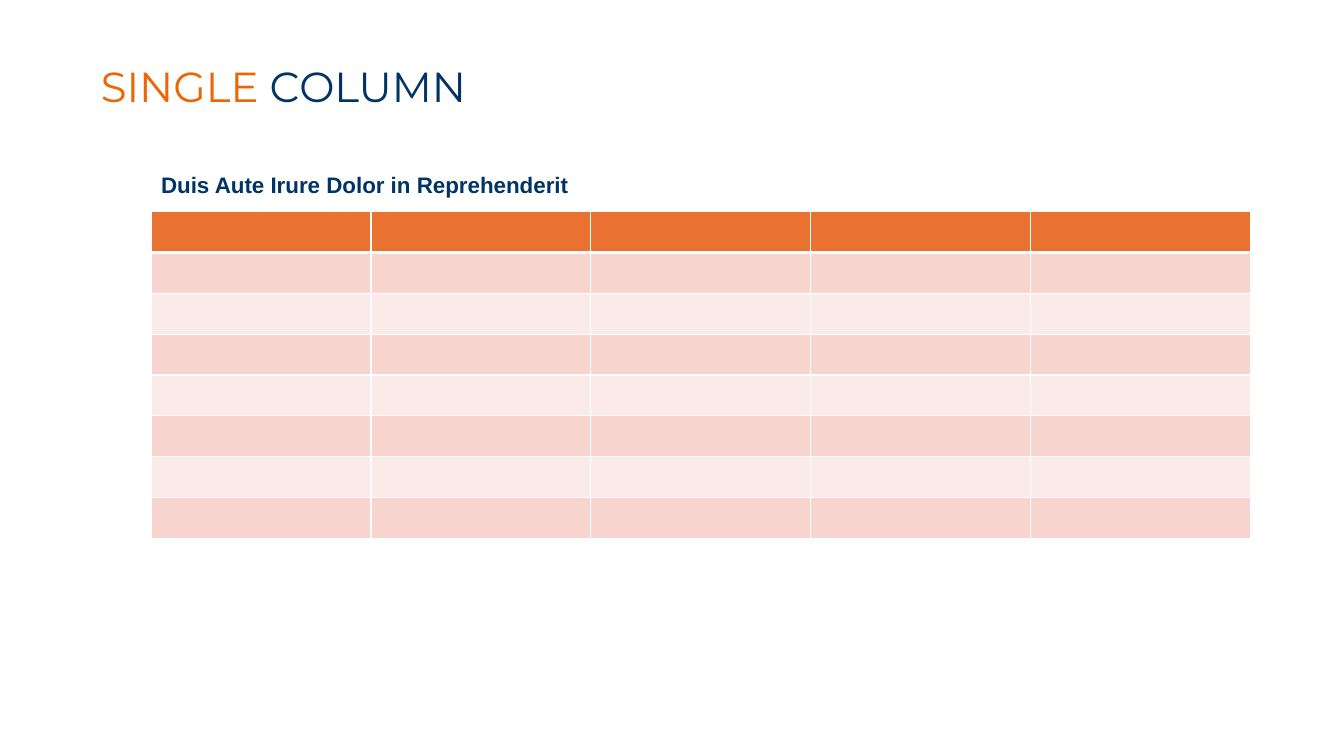
"""Build the single column slide: a two-colour title, a heading and an empty banded table."""
import pptx
import pptx.dml.color
import pptx.enum.text
import pptx.oxml
import pptx.oxml.ns
import pptx.util

Cm = pptx.util.Cm
Pt = pptx.util.Pt
MSO_ANCHOR = pptx.enum.text.MSO_ANCHOR

COLORS = {
    "orange": "EC6607",
    "navy": "003366",
    "header": "E97132",
    "band_dark": "F7D5CE",
    "band_light": "FBEBE8",
    "border": "FFFFFF",
}
ROWS, COLS = 8, 5
ROW_HEIGHT, COL_WIDTH = Cm(1.03), Cm(5.54)


def rgb(name):
    return pptx.dml.color.RGBColor.from_string(COLORS[name])


def add_border(cell, side, width):
    ln = pptx.oxml.parse_xml(
        f'<a:{side} {pptx.oxml.ns.nsdecls("a")} w="{Pt(width)}"><a:solidFill>'
        f'<a:srgbClr val="{COLORS["border"]}"/></a:solidFill></a:{side}>'
    )
    cell._tc.get_or_add_tcPr().append(ln)


prs = pptx.Presentation()
prs.slide_width, prs.slide_height = Cm(33.87), Cm(19.05)
s = prs.slides.add_slide(prs.slide_layouts[6])

texts = [
    {
        "box": (2.29, 1.52, 29.21, 1.42),
        "anchor": MSO_ANCHOR.MIDDLE,
        "spacing": 0.9,
        "runs": [("SINGLE ", "orange"), ("COLUMN", "navy")],
        "font": {"name": "Montserrat", "size": Pt(30)},
    },
    {
        "box": (3.81, 3.85, 27.69, 1.14),
        "anchor": MSO_ANCHOR.TOP,
        "spacing": 1.5,
        "runs": [("Duis Aute Irure Dolor in Reprehenderit", "navy")],
        "font": {"name": "Arial", "size": Pt(16), "bold": True},
    },
]
for text in texts:
    tf = s.shapes.add_textbox(*map(Cm, text["box"])).text_frame
    tf.word_wrap = True
    tf.vertical_anchor = text["anchor"]
    p = tf.paragraphs[0]
    p.line_spacing = text["spacing"]
    for words, color in text["runs"]:
        r = p.add_run()
        r.text = words
        r.font.color.rgb = rgb(color)
        for attr, value in text["font"].items():
            setattr(r.font, attr, value)

table = s.shapes.add_table(
    ROWS, COLS, Cm(3.81), Cm(5.33), COLS * COL_WIDTH, ROWS * ROW_HEIGHT
).table
for col in table.columns:
    col.width = COL_WIDTH
for i, row in enumerate(table.rows):
    row.height = ROW_HEIGHT
    fill = "header" if i == 0 else ("band_light", "band_dark")[i % 2]
    widths = {"lnL": 1, "lnR": 1, "lnT": 3 if i == 1 else 1, "lnB": 3 if i == 0 else 1}
    for cell in row.cells:
        for side, width in widths.items():
            add_border(cell, side, width)
        cell.fill.solid()
        cell.fill.fore_color.rgb = rgb(fill)

prs.save("out.pptx")
